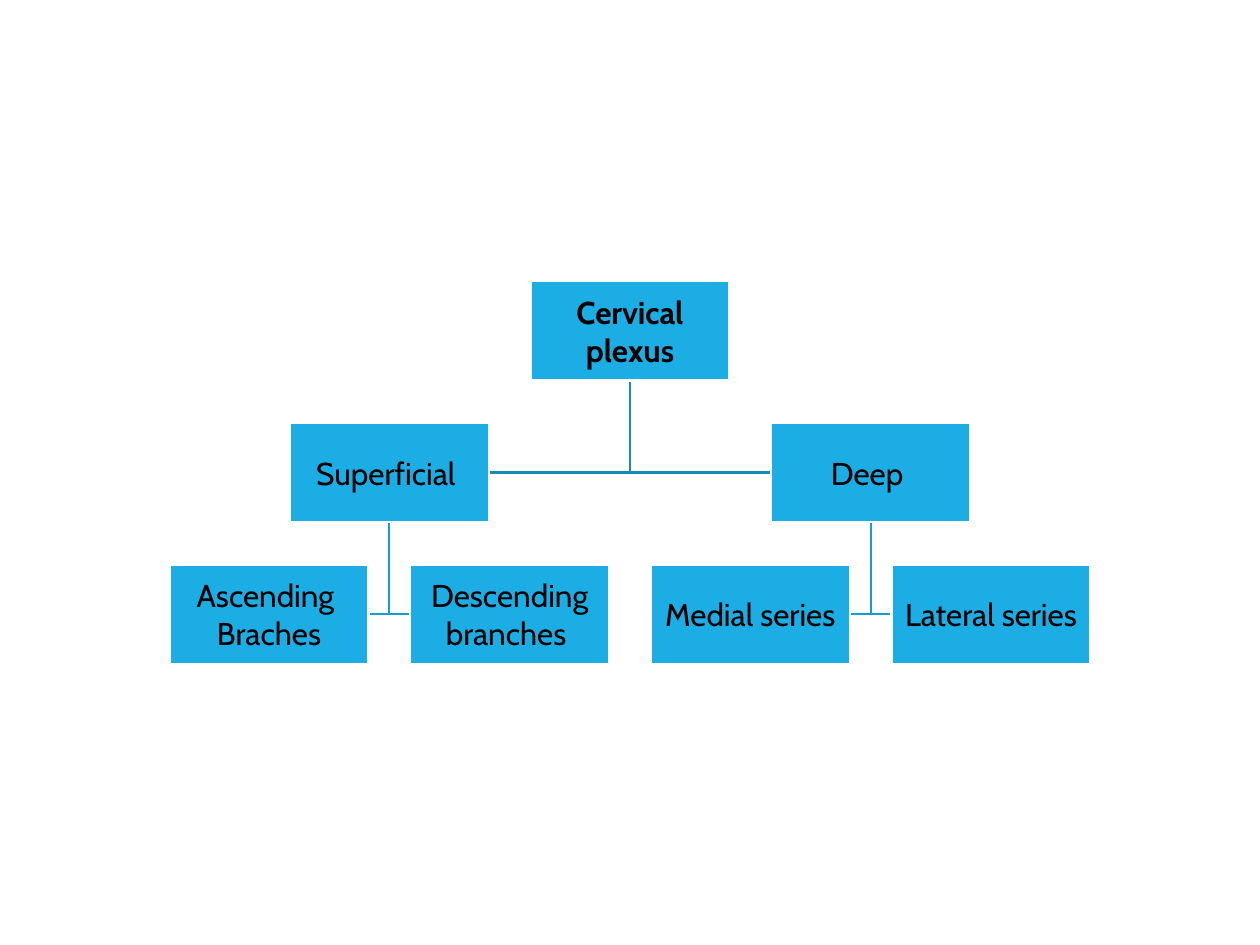
"""Build a slide with a tree chart of the cervical plexus."""
from pptx import Presentation
from pptx.dml.color import RGBColor
from pptx.enum.shapes import MSO_SHAPE
from pptx.enum.text import MSO_ANCHOR, PP_ALIGN
from pptx.util import Inches, Pt

TREE = ("Cervical plexus", [
    ("Superficial ", [("Ascending \nBraches", []), ("Descending\nbranches ", [])]),
    ("Deep ", [("Medial series", []), ("Lateral series", [])]),
])
THEME = {
    "font": "Cabin", "size": 18, "ink": "000000", "box": "1CADE4",
    "edge": "FFFFFF", "links": ["168BB7", "199DCF"], "line": 1.25,
}
MID, TOP = 5, 2.23
WIDE, HIGH = 1.58, 0.79
STEP, DROP = 1.91, 1.125
PAD = 0.01


def color(name):
    return RGBColor.from_string(name)


def write(shape, text, size=THEME["size"], font=THEME["font"], ink=THEME["ink"], bold=False):
    frame = shape.text_frame
    frame.word_wrap = True
    frame.vertical_anchor = MSO_ANCHOR.MIDDLE
    frame.margin_left = frame.margin_right = Inches(PAD)
    frame.margin_top = frame.margin_bottom = Inches(PAD)
    frame.text = text
    for para in frame.paragraphs:
        para.alignment = PP_ALIGN.CENTER
        style = para.runs[0].font
        style.size, style.name, style.bold = Pt(size), font, bold
        style.color.rgb = color(ink)


def stroke(shape, tint):
    shape.shadow.inherit = False
    shape.line.color.rgb = color(tint)
    shape.line.width = Pt(THEME["line"])


def place(node, mid=MID, level=0):
    text, kids = node
    spots = [(text, mid, level)]
    gap = STEP * 2 / 2 ** level
    for i, kid in enumerate(kids):
        spots += place(kid, mid + (i - (len(kids) - 1) / 2) * gap, level + 1)
    return spots


def link(slide, mid, level, side):
    y = TOP + level * DROP + HIGH
    turn = TOP + (level + 1) * DROP + HIGH / 2
    end = mid + side * (STEP / 2 ** level - WIDE / 2)
    pen = slide.shapes.build_freeform(Inches(mid), Inches(y))
    pen.add_line_segments([(Inches(mid), Inches(turn)), (Inches(end), Inches(turn))], close=False)
    shape = pen.convert_to_shape()
    shape.fill.background()
    stroke(shape, THEME["links"][level])


def box(slide, text, mid, level):
    shape = slide.shapes.add_shape(
        MSO_SHAPE.RECTANGLE, Inches(mid - WIDE / 2), Inches(TOP + level * DROP),
        Inches(WIDE), Inches(HIGH))
    shape.fill.solid()
    shape.fill.fore_color.rgb = color(THEME["box"])
    stroke(shape, THEME["edge"])
    write(shape, text, bold=level == 0)


def main():
    deck = Presentation()
    deck.slide_width, deck.slide_height = Inches(10), Inches(7.5)
    slide = deck.slides.add_slide(deck.slide_layouts[6])
    spots = place(TREE)
    for text, mid, level in spots:
        if level < len(THEME["links"]):
            for side in (1, -1):
                link(slide, mid, level, side)
    for spot in spots:
        box(slide, *spot)
    deck.save("out.pptx")


if __name__ == "__main__":
    main()
